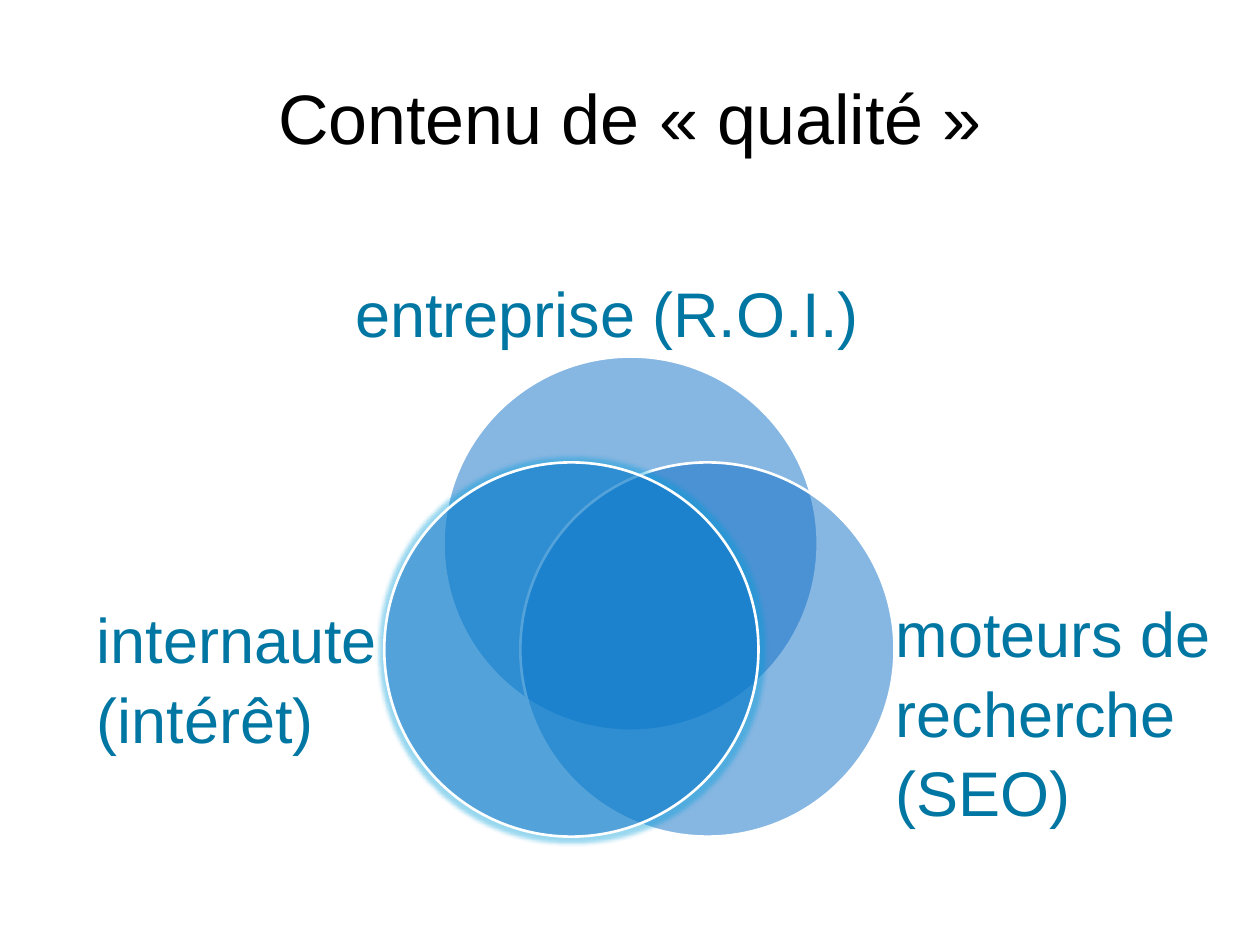
"""Build a slide with a three-circle Venn diagram about quality content."""
from lxml import etree
from pptx import Presentation
from pptx.dml.color import RGBColor
from pptx.enum.shapes import MSO_SHAPE
from pptx.enum.text import MSO_ANCHOR, PP_ALIGN
from pptx.oxml.ns import qn
from pptx.util import Inches, Pt

OVAL = MSO_SHAPE.OVAL
TOP, MIDDLE = MSO_ANCHOR.TOP, MSO_ANCHOR.MIDDLE
LEFT, CENTER = PP_ALIGN.LEFT, PP_ALIGN.CENTER
BLACK = RGBColor(0x00, 0x00, 0x00)
WHITE = RGBColor(0xFF, 0xFF, 0xFF)
BLUE = RGBColor(0x0F, 0x6F, 0xC6)
TEAL = RGBColor(0x00, 0x76, 0xA3)
CYAN = RGBColor(0x00, 0x9D, 0xD9)
DIAMETER = 2.97
LOWER_TOP = 3.67


def set_alpha(color, percent):
    etree.SubElement(color, qn("a:alpha"), val=str(percent * 1000))


class Deck:
    def __init__(self, prs, font="Arial"):
        self.font = font
        self.s = prs.slides.add_slide(prs.slide_layouts[6])

    def text(self, text, x, y, w, h, size=36, color=TEAL, align=LEFT, anchor=TOP, spacing=1.05):
        tf = self.s.shapes.add_textbox(Inches(x), Inches(y), Inches(w), Inches(h)).text_frame
        tf.word_wrap = True
        tf.vertical_anchor = anchor
        p = tf.paragraphs[0]
        p.alignment = align
        p.line_spacing = spacing
        r = p.add_run()
        r.text = text
        r.font.name = self.font
        r.font.size = Pt(size)
        r.font.color.rgb = color

    def circle(self, x, y, glow=None):
        sp = self.s.shapes.add_shape(OVAL, Inches(x), Inches(y), Inches(DIAMETER), Inches(DIAMETER))
        sp.shadow.inherit = False
        sp.fill.solid()
        sp.fill.fore_color.rgb = BLUE
        sp.line.color.rgb = WHITE
        sp.line.width = Pt(1.5)
        pr = sp.element.spPr
        set_alpha(pr.find(qn("a:solidFill"))[0], 50)
        if glow is not None:
            halo = etree.SubElement(pr.find(qn("a:effectLst")), qn("a:glow"), rad=str(Pt(5)))
            set_alpha(etree.SubElement(halo, qn("a:srgbClr"), val=str(glow)), 40)


def main():
    prs = Presentation()
    prs.slide_width, prs.slide_height = Inches(10), Inches(7.5)
    deck = Deck(prs)
    deck.text("Contenu de «\u00a0qualité\u00a0»".replace("\u00a0", " "), 0.5, 0.3, 9, 1.25,
              size=40, color=BLACK, align=CENTER, anchor=MIDDLE, spacing=1)
    deck.circle(3.52, 2.83)
    deck.circle(4.13, LOWER_TOP)
    deck.circle(3.05, LOWER_TOP, glow=CYAN)
    deck.text("entreprise (R.O.I.)", 2.72, 2.1, 4.57, 0.71)
    deck.text("internaute (intérêt)", 0.67, 4.69, 2.91, 1.31)
    deck.text("moteurs de recherche (SEO)", 7.01, 4.64, 2.8, 1.92)
    prs.save("out.pptx")


if __name__ == "__main__":
    main()
